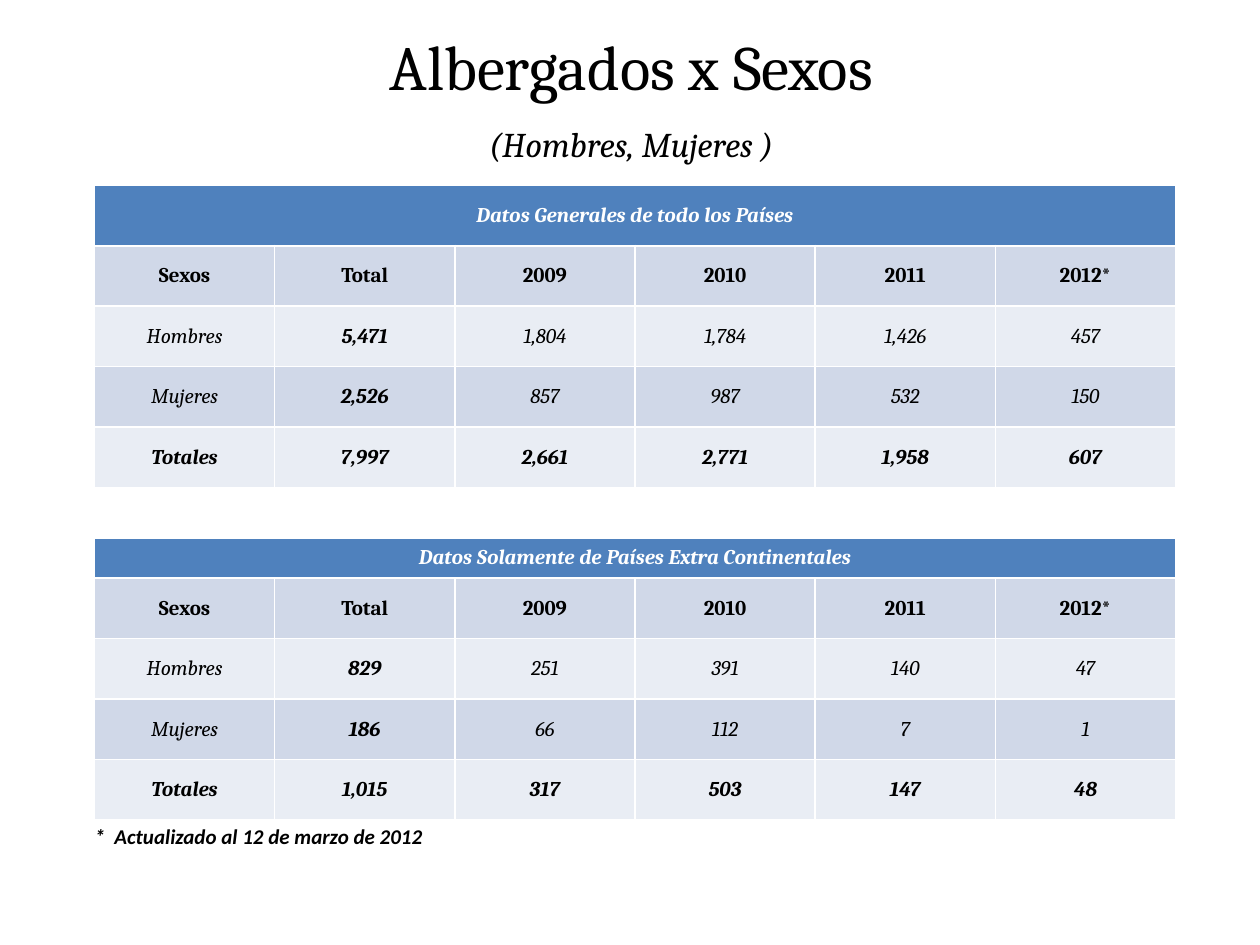
from lxml import etree
from pptx import Presentation
from pptx.dml.color import RGBColor
from pptx.enum import text
from pptx.oxml import ns
from pptx.util import Inches, Pt

BLACK = RGBColor(0x00, 0x00, 0x00)
WHITE = RGBColor(0xFF, 0xFF, 0xFF)
BLUE = RGBColor(0x4F, 0x81, 0xBD)
BAND = RGBColor(0xD0, 0xD8, 0xE8)
LIGHT = RGBColor(0xE9, 0xED, 0xF4)


def style(p, size, font="Cambria", color=BLACK, bold=False, italic=False):
    p.font.size = Pt(size)
    for r in p.runs:
        r.font.name = font
        r.font.size = Pt(size)
        r.font.color.rgb = color
        r.font.bold = bold
        r.font.italic = italic


def add_borders(cell, widths):
    tcPr = cell._tc.get_or_add_tcPr()
    for i, (side, width) in enumerate(zip("LRTB", widths)):
        ln = etree.Element(ns.qn(f"a:ln{side}"), w=str(Pt(width)))
        fill = etree.SubElement(ln, ns.qn("a:solidFill"))
        etree.SubElement(fill, ns.qn("a:srgbClr"), val=str(WHITE))
        tcPr.insert(i, ln)


prs = Presentation()
prs.slide_width = Inches(10)
prs.slide_height = Inches(7.5)
s = prs.slides.add_slide(prs.slide_layouts[6])

sp = s.shapes.add_textbox(Inches(0.51), Inches(0.21), Inches(9), Inches(1.15))
tf = sp.text_frame
tf.word_wrap = True
tf.margin_top = tf.margin_bottom = 0
tf.text = "Albergados x Sexos\n(Hombres, Mujeres )"
for p, size, spacing in zip(tf.paragraphs, (36, 19.8), (44, 35)):
    p.alignment = text.PP_ALIGN.CENTER
    p.line_spacing = Pt(spacing)
    style(p, size, italic=size < 36)

heads = ["Sexos", "Total", "2009", "2010", "2011", "2012*"]
rows = [
    ["Datos Generales de todo los Países"],
    heads,
    ["Hombres", "5,471", "1,804", "1,784", "1,426", "457"],
    ["Mujeres", "2,526", "857", "987", "532", "150"],
    ["Totales", "7,997", "2,661", "2,771", "1,958", "607"],
    [],
    [],
    ["Datos Solamente de Países Extra Continentales"],
    heads,
    ["Hombres", "829", "251", "391", "140", "47"],
    ["Mujeres", "186", "66", "112", "7", "1"],
    ["Totales", "1,015", "317", "503", "147", "48"],
    ["*  Actualizado al 12 de marzo de 2012"],
]
heights = [0.48] * 5 + [0.2, 0.2, 0.32] + [0.48] * 4 + [0.28]
fills = [BLUE, BAND, LIGHT, BAND, LIGHT]
fills = fills + [None] * 2 + fills + [None]

table = s.shapes.add_table(len(rows), len(heads), Inches(0.75), Inches(1.47),
                           Inches(8.58), Inches(sum(heights))).table
table.first_row = False
table.horz_banding = False
for col in table.columns:
    col.width = Inches(1.43)

for i, (values, height, fill) in enumerate(zip(rows, heights, fills)):
    table.rows[i].height = Inches(height)
    title = fill == BLUE
    note = fill is None
    for j in range(len(heads)):
        cell = table.cell(i, j)
        cell.margin_left = cell.margin_right = 0
        cell.margin_top = cell.margin_bottom = 0
        cell.vertical_anchor = text.MSO_ANCHOR.MIDDLE
        if note:
            cell.fill.background()
        else:
            cell.fill.solid()
            cell.fill.fore_color.rgb = fill
        header = values == heads
        add_borders(cell, (1, 1, 1.5 if header else 1, 1.5 if title else 1))
        p = cell.text_frame.paragraphs[0]
        p.text = values[j] if j < len(values) else ""
        p.alignment = text.PP_ALIGN.LEFT if note else text.PP_ALIGN.CENTER
        plain = values and values[0] in ("Hombres", "Mujeres") and j != 1
        style(p, 12 if values else 10, "Calibri" if note else "Cambria",
              WHITE if title else BLACK, bold=not plain, italic=not header)
    if title:
        table.cell(i, 0).merge(table.cell(i, len(heads) - 1))
    elif note and values:
        table.cell(i, 0).merge(table.cell(i, 1))

prs.save("out.pptx")
